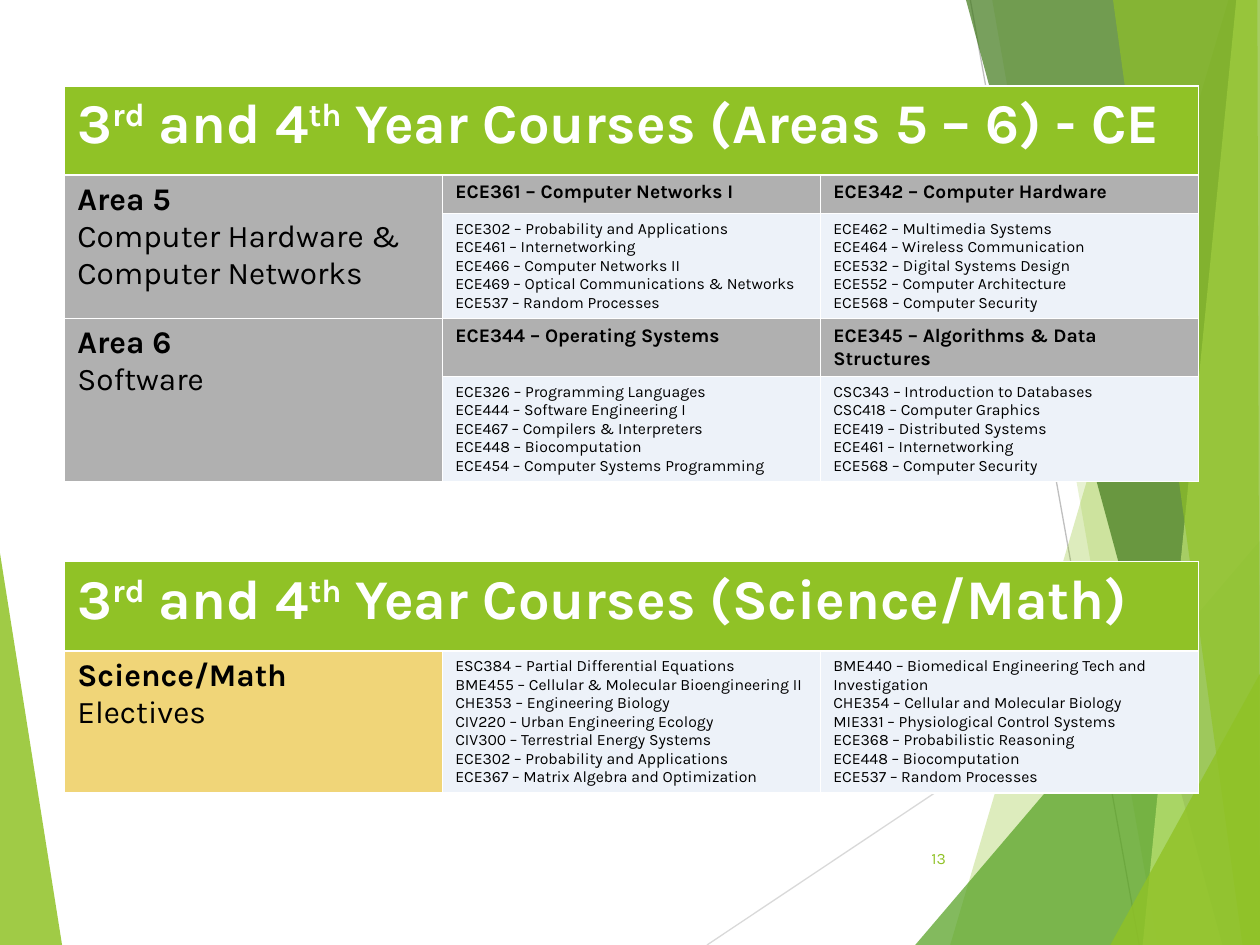
from lxml import etree
from pptx import Presentation
from pptx.dml.color import RGBColor
from pptx.enum.shapes import MSO_CONNECTOR
from pptx.enum.text import MSO_ANCHOR, PP_ALIGN
from pptx.oxml.ns import qn
from pptx.util import Pt

FONT = "Karla"
WIDTH, HEIGHT = 720, 540
COLORS = {
    "lime": "90C226", "green": "54A021", "forest": "3F7819", "pale": "C0E474",
    "light_line": "D9D9D9", "line": "BFBFBF", "white": "FFFFFF", "black": "000000",
    "core": "B0B0B0", "elective": "EDF2F9", "science": "F0D578",
}
LEFT_FACET = ([(0, 316), (35.5, 540), (0, 540)], "lime", 85)
RIGHT_FACETS = [
    ([(702, 0), (543, 540), (720, 540), (720, 0)], "lime", 30),
    ([(567, 0), (661.5, 540), (720, 540), (720, 0)], "lime", 20),
    ([(523, 540), (720, 309), (720, 540)], "green", 72),
    ([(552, 0), (698.5, 540), (720, 540), (720, 0)], "forest", 70),
    ([(706.5, 0), (653, 540), (720, 540), (720, 0)], "pale", 70),
    ([(636, 0), (710, 540), (720, 540), (718.5, 0)], "lime", 65),
    ([(634.5, 540), (720, 385), (720, 540)], "lime", 80),
]
RAYS = [((404, 540), (720, 329), "light_line"), ((554.5, 0), (651, 540), "line")]

AREAS = [
    ("Area 5", "Computer Hardware & Computer Networks", [
        ("ECE361 – Computer Networks I", [
            "ECE302 – Probability and Applications", "ECE461 – Internetworking",
            "ECE466 – Computer Networks II",
            "ECE469 – Optical Communications & Networks", "ECE537 – Random Processes"]),
        ("ECE342 – Computer Hardware", [
            "ECE462 – Multimedia Systems", "ECE464 – Wireless Communication",
            "ECE532 – Digital Systems Design", "ECE552 – Computer Architecture",
            "ECE568 – Computer Security"]),
    ]),
    ("Area 6", "Software", [
        ("ECE344 – Operating Systems", [
            "ECE326 – Programming Languages", "ECE444 – Software Engineering I",
            "ECE467 – Compilers & Interpreters", "ECE448 – Biocomputation",
            "ECE454 – Computer Systems Programming"]),
        ("ECE345 – Algorithms & Data Structures", [
            "CSC343 – Introduction to Databases", "CSC418 – Computer Graphics",
            "ECE419 – Distributed Systems", "ECE461 – Internetworking",
            "ECE568 – Computer Security"]),
    ]),
]
SCIENCE_COURSES = [
    ["ESC384 – Partial Differential Equations",
     "BME455 – Cellular & Molecular Bioengineering II", "CHE353 – Engineering Biology",
     "CIV220 – Urban Engineering Ecology", "CIV300 – Terrestrial Energy Systems",
     "ECE302 – Probability and Applications", "ECE367 – Matrix Algebra and Optimization"],
    ["BME440 – Biomedical Engineering Tech and Investigation",
     "CHE354 – Cellular and Molecular Biology", "MIE331 – Physiological Control Systems",
     "ECE368 – Probabilistic Reasoning", "ECE448 – Biocomputation",
     "ECE537 – Random Processes"],
]


def color(name):
    return RGBColor.from_string(COLORS[name])


def style(para, size, tint="black", bold=None):
    para.font.name = FONT
    para.font.size = Pt(size)
    para.font.color.rgb = color(tint)
    para.font.bold = bold


def fill_cell(cell, tint):
    cell.fill.solid()
    cell.fill.fore_color.rgb = color(tint)


def add_facet(page, points, tint, opacity):
    corners = [(Pt(x), Pt(y)) for x, y in points]
    builder = page.shapes.build_freeform(*corners[0])
    builder.add_line_segments(corners[1:])
    facet = builder.convert_to_shape()
    facet.shadow.inherit = False
    facet.fill.solid()
    facet.fill.fore_color.rgb = color(tint)
    facet.line.fill.background()
    tone = facet.fill._xPr.find(".//" + qn("a:srgbClr"))
    etree.SubElement(tone, qn("a:alpha")).set("val", str(opacity * 1000))


def add_ray(page, start, end, tint):
    ray = page.shapes.add_connector(
        MSO_CONNECTOR.STRAIGHT, *[Pt(value) for value in start + end])
    ray.line.color.rgb = color(tint)
    ray.line.width = Pt(0.75)
    etree.SubElement(ray._element.spPr, qn("a:effectLst"))


def add_backdrop(page):
    add_facet(page, *LEFT_FACET)
    for ray in RAYS:
        add_ray(page, *ray)
    for facet in RIGHT_FACETS:
        add_facet(page, *facet)


def write_heading(cell, topic):
    fill_cell(cell, "lime")
    para = cell.text_frame.paragraphs[0]
    style(para, 32, "white", True)
    pieces = [("3", 0), ("rd", 30), (" and 4", 0), ("th", 30),
              (f" Year Courses ({topic}", 0)]
    for text, raised in pieces:
        span = para.add_run()
        span.text = text
        if raised:
            span.font._element.set("baseline", str(raised * 1000))


def write_area(cell, title, subject, tint):
    fill_cell(cell, tint)
    para = cell.text_frame.paragraphs[0]
    style(para, 18)
    for text, bold in ((title, True), (subject, False)):
        if not bold:
            para.add_line_break()
        span = para.add_run()
        span.text = text
        span.font.bold = bold


def write_courses(cell, courses, size, tint, bold):
    fill_cell(cell, tint)
    cell.text_frame.text = "\n".join(courses)
    for para in cell.text_frame.paragraphs:
        style(para, size, "black", bold)


def add_grid(page, box, row_heights, topic):
    frame = page.shapes.add_table(len(row_heights), 3, *[Pt(value) for value in box])
    table = frame.table
    table.horz_banding = False
    for row, height in zip(table.rows, row_heights):
        row.height = Pt(height)
    table.cell(0, 0).merge(table.cell(0, 2))
    write_heading(table.cell(0, 0), topic)
    return table


def add_area_table(page, box):
    table = add_grid(page, box, [51, 22, 36, 23, 36], "Areas 5 – 6) - CE")
    for index, (title, subject, groups) in enumerate(AREAS):
        top = 1 + 2 * index
        table.cell(top, 0).merge(table.cell(top + 1, 0))
        write_area(table.cell(top, 0), title, subject, "core")
        for column, (core, electives) in enumerate(groups, 1):
            write_courses(table.cell(top, column), [core], 11, "core", True)
            write_courses(table.cell(top + 1, column), electives, 9, "elective", False)


def add_science_table(page, box):
    table = add_grid(page, box, [51, 52], "Science/Math)")
    write_area(table.cell(1, 0), "Science/Math", "Electives", "science")
    for column, courses in enumerate(SCIENCE_COURSES, 1):
        write_courses(table.cell(1, column), courses, 9, "elective", False)


def add_page_number(page, box):
    label = page.shapes.add_textbox(*[Pt(value) for value in box])
    label.text_frame.word_wrap = True
    label.text_frame.vertical_anchor = MSO_ANCHOR.MIDDLE
    para = label.text_frame.paragraphs[0]
    para.text = "13"
    para.alignment = PP_ALIGN.RIGHT
    style(para, 9, "lime")


def main():
    deck = Presentation()
    deck.slide_width, deck.slide_height = Pt(WIDTH), Pt(HEIGHT)
    page = deck.slides.add_slide(deck.slide_layouts[6])
    add_backdrop(page)
    add_area_table(page, (37, 49, 648, 220))
    add_science_table(page, (37, 321, 648, 134))
    add_page_number(page, (507.6, 476, 40, 29))
    deck.save("out.pptx")


if __name__ == "__main__":
    main()
